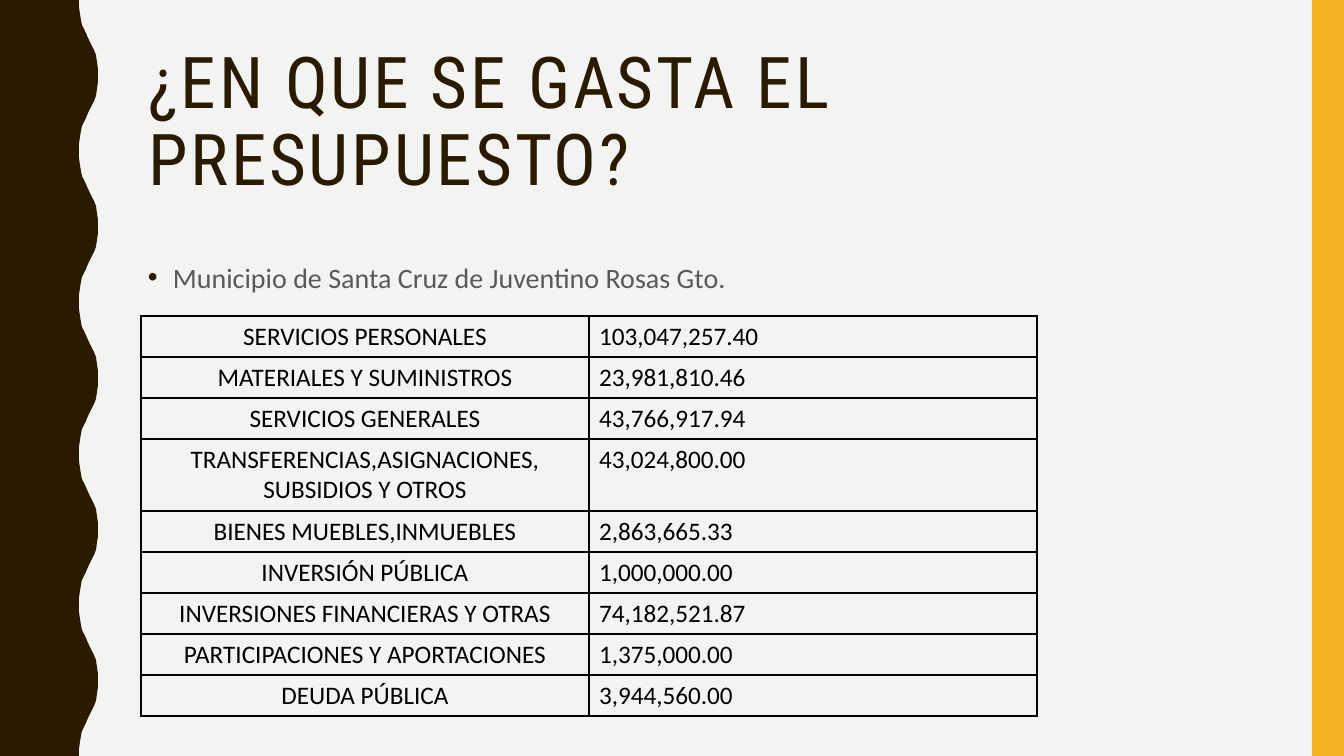
from lxml.etree import SubElement
from pptx import Presentation
from pptx.dml.color import RGBColor
from pptx.enum.shapes import MSO_SHAPE
from pptx.enum.text import MSO_ANCHOR, MSO_AUTO_SIZE, PP_ALIGN
from pptx.oxml.ns import qn
from pptx.util import Pt

TITLE = "¿EN QUE SE GASTA EL PRESUPUESTO?"
TOWN = "Municipio de Santa Cruz de Juventino Rosas Gto."
COSTS = [
    (["SERVICIOS PERSONALES"], "103,047,257.40"),
    (["MATERIALES Y SUMINISTROS"], "23,981,810.46"),
    (["SERVICIOS GENERALES"], "43,766,917.94"),
    (["TRANSFERENCIAS,ASIGNACIONES,", "SUBSIDIOS Y OTROS"], "43,024,800.00"),
    (["BIENES MUEBLES,INMUEBLES"], "2,863,665.33"),
    (["INVERSIÓN PÚBLICA"], "1,000,000.00"),
    (["INVERSIONES FINANCIERAS Y OTRAS"], "74,182,521.87"),
    (["PARTICIPACIONES Y APORTACIONES"], "1,375,000.00"),
    (["DEUDA PÚBLICA"], "3,944,560.00"),
]
COLORS = {"back": "F3F3F2", "dark": "2A1A00", "gold": "F8B323",
          "gray": "595959", "black": "000000"}
HEAD, BODY = "Roboto Condensed", "Calibri"

WIDE, HIGH = 1344, 756
SCALE = 12192000 / WIDE
WAVES = 5
# Half a wave, from trough to crest
CURVE = [(79, 0), (79, 7), (80, 14), (81, 20), (82, 25), (84, 29), (86, 33),
         (88, 38), (90, 42), (92, 46), (94, 50), (96, 55), (97, 62), (98, 69),
         (98, 76)]
ROW, TALL, COL = 41, 72, 448


def px(num):
    return round(num * SCALE)


def box(*nums):
    return [px(num) for num in nums]


def color(name):
    return RGBColor.from_string(COLORS[name])


def paint(shape, name):
    shape.shadow.inherit = False
    shape.fill.solid()
    shape.fill.fore_color.rgb = color(name)
    shape.line.fill.background()


def write(para, text, size, font, name):
    run = para.add_run()
    run.text = text
    run.font.size = Pt(size)
    run.font.name = font
    run.font.color.rgb = color(name)
    return run


def border(cell):
    props = cell._tc.get_or_add_tcPr()
    for side in ("a:lnL", "a:lnR", "a:lnT", "a:lnB"):
        line = SubElement(props, qn(side), w=str(Pt(1)))
        fill = SubElement(line, qn("a:solidFill"))
        SubElement(fill, qn("a:srgbClr"), val=COLORS["black"])


def bullet(para):
    props = para._p.get_or_add_pPr()
    props.set("marL", str(px(25)))
    props.set("indent", str(px(-25)))
    tint = SubElement(props, qn("a:buClr"))
    SubElement(tint, qn("a:srgbClr"), val=COLORS["dark"])
    SubElement(props, qn("a:buFont"), typeface="Arial")
    SubElement(props, qn("a:buChar"), char="•")


def add_wave(slide):
    step = HIGH / WAVES
    points = []
    for num in range(WAVES):
        points += [(x, num * step + y) for x, y in CURVE]
        points += [(x, (num + 1) * step - y) for x, y in CURVE[-2::-1]]
    form = slide.shapes.build_freeform(0, 0, scale=SCALE)
    form.add_line_segments(points + [(0, HIGH)], close=True)
    paint(form.convert_to_shape(), "dark")


def add_title(slide):
    title = slide.shapes.title
    title.left, title.top, title.width, title.height = box(138, 42, 1122, 164)
    frame = title.text_frame
    frame.word_wrap = True
    frame.auto_size = MSO_AUTO_SIZE.NONE
    frame.vertical_anchor = MSO_ANCHOR.MIDDLE
    para = frame.paragraphs[0]
    para.alignment = PP_ALIGN.LEFT
    para.line_spacing = 0.9
    run = write(para, TITLE, 51, HEAD, "dark")
    run.font._element.set("spc", "200")


def add_town(slide):
    frame = slide.shapes.add_textbox(*box(138, 252, 1122, 396)).text_frame
    frame.word_wrap = True
    para = frame.paragraphs[0]
    para.line_spacing = 1.1
    para.space_before = Pt(7)
    bullet(para)
    write(para, TOWN, 20, BODY, "gray")


def add_costs(slide):
    sizes = [ROW if len(lines) == 1 else TALL for lines, _ in COSTS]
    table = slide.shapes.add_table(
        len(COSTS), 2, *box(141, 316, 2 * COL, sum(sizes))).table
    table.first_row = table.horz_banding = False
    for col in table.columns:
        col.width = px(COL)
    for row, size, (lines, cost) in zip(table.rows, sizes, COSTS):
        row.height = px(size)
        aligns = (PP_ALIGN.CENTER, PP_ALIGN.LEFT)
        for cell, texts, align in zip(row.cells, (lines, [cost]), aligns):
            border(cell)
            cell.fill.background()
            frame = cell.text_frame
            for num, text in enumerate(texts):
                para = frame.add_paragraph() if num else frame.paragraphs[0]
                para.alignment = align
                write(para, text, 18, BODY, "black")


def main():
    deck = Presentation()
    deck.slide_width, deck.slide_height = box(WIDE, HIGH)
    slide = deck.slides.add_slide(deck.slide_layouts[5])
    slide.background.fill.solid()
    slide.background.fill.fore_color.rgb = color("back")
    add_wave(slide)
    bar = slide.shapes.add_shape(MSO_SHAPE.RECTANGLE, *box(1312, 0, 32, HIGH))
    paint(bar, "gold")
    add_title(slide)
    add_town(slide)
    add_costs(slide)
    deck.save("out.pptx")


if __name__ == "__main__":
    main()
